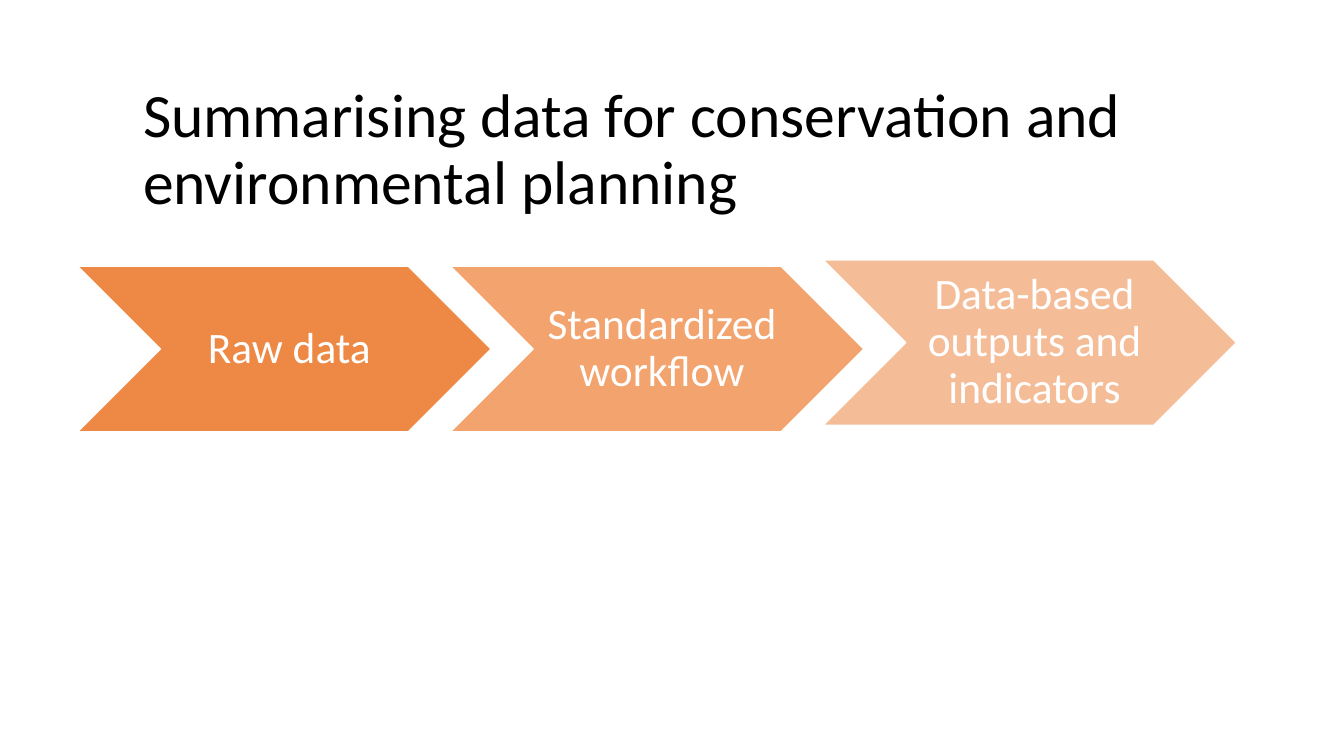
from lxml import etree
from pptx import Presentation
from pptx.dml.color import RGBColor
from pptx.enum.shapes import MSO_SHAPE
from pptx.enum.text import MSO_ANCHOR, MSO_AUTO_SIZE, PP_ALIGN
from pptx.oxml.ns import qn
from pptx.util import Cm, Pt

TITLE = "Summarising data for conservation and environmental planning"
STEPS = [
    ("Raw data", 6.71, 90),
    ("Standardized workflow", 6.71, 70),
    ("Data-based outputs and indicators", 6.55, 50),
]
COLORS = {"title": "000000", "step": "ED7D31", "white": "FFFFFF"}
FONT = "Calibri"
STEP_LEFT, STEP_PITCH = 1.96, 9.39
STEP_WIDTH, STEP_HEIGHT = 10.42, 4.17
CHEVRON = MSO_SHAPE.CHEVRON
MIDDLE = MSO_ANCHOR.MIDDLE
LEFT, CENTER = PP_ALIGN.LEFT, PP_ALIGN.CENTER
NO_AUTOFIT = MSO_AUTO_SIZE.NONE


def color(name):
    return RGBColor.from_string(COLORS[name])


def write(shape, text, size, color_name, align):
    tf = shape.text_frame
    tf.text = text
    tf.word_wrap = True
    tf.auto_size = NO_AUTOFIT
    tf.vertical_anchor = MIDDLE
    p = tf.paragraphs[0]
    p.alignment = align
    p.line_spacing = 0.9
    font = p.runs[0].font
    font.name = FONT
    font.size = Pt(size)
    font.color.rgb = color(color_name)


def add_step(slide, index, text, top, opacity):
    s = slide.shapes.add_shape(CHEVRON, Cm(STEP_LEFT + index * STEP_PITCH), Cm(top),
                               Cm(STEP_WIDTH), Cm(STEP_HEIGHT))
    s.shadow.inherit = False
    s.fill.solid()
    s.fill.fore_color.rgb = color("step")
    fill_color = s._element.spPr.find(qn("a:solidFill")).find(qn("a:srgbClr"))
    etree.SubElement(fill_color, qn("a:alpha")).set("val", str(opacity * 1000))
    s.line.color.rgb = color("white")
    s.line.width = Pt(1)
    write(s, text, 31, "white", CENTER)
    tf = s.text_frame
    tf.margin_left = Cm(0.36)
    tf.margin_right = tf.margin_top = tf.margin_bottom = Cm(0.12)


def main():
    prs = Presentation()
    prs.slide_width, prs.slide_height = Cm(33.87), Cm(19.05)
    slide = prs.slides.add_slide(prs.slide_layouts[5])
    title = slide.shapes.title
    title.left, title.top = Cm(3.35), Cm(1.96)
    title.width, title.height = Cm(26.49), Cm(3.68)
    write(title, TITLE, 44, "title", LEFT)
    for index, step in enumerate(STEPS):
        add_step(slide, index, *step)
    prs.save("out.pptx")


if __name__ == "__main__":
    main()
